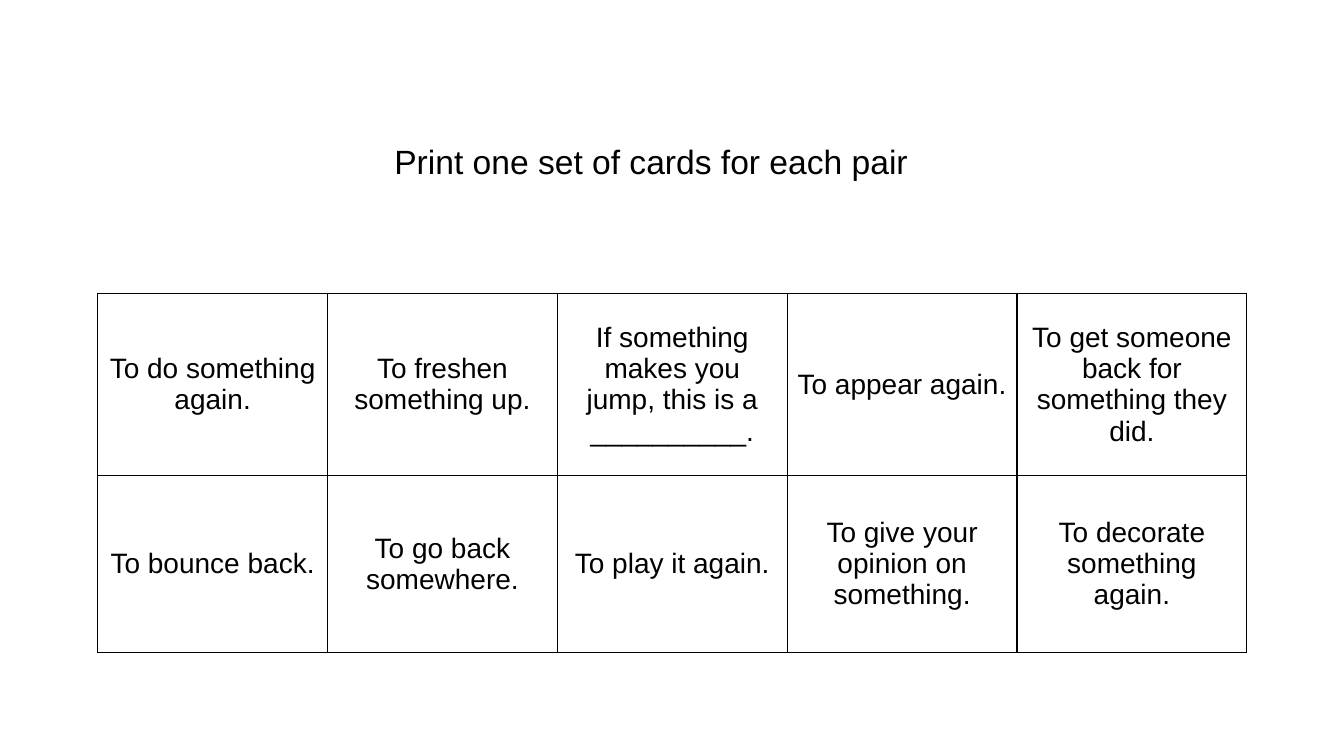
from pptx import Presentation
from pptx.dml.color import RGBColor
from pptx.enum import text
from pptx.oxml import ns, xmlchemy
from pptx.util import Pt

BLACK, WHITE = "000000", "FFFFFF"
COLUMN_WIDTH = 164.16
ROW_HEIGHTS = (130.32, 126)
CARDS = (
    ("To do something again.", "To freshen something up.",
     "If something makes you jump, this is a __________.",
     "To appear again.", "To get someone back for something they did."),
    ("To bounce back.", "To go back somewhere.", "To play it again.",
     "To give your opinion on something.", "To decorate something again."),
)


def colour(code):
    """Turn a hex string into a colour."""
    return RGBColor.from_string(code)


def write(para, words, size):
    """Write one centred black paragraph."""
    para.text = words
    para.alignment = text.PP_ALIGN.CENTER
    para.font.name = "Arial"
    para.font.size = Pt(size)
    para.font.color.rgb = colour(BLACK)


def add_title(page, words, left, top, width, height):
    """Add the heading above the cards."""
    frame = page.shapes.add_textbox(Pt(left), Pt(top), Pt(width), Pt(height)).text_frame
    frame.word_wrap = True
    frame.vertical_anchor = text.MSO_ANCHOR.MIDDLE
    write(frame.paragraphs[0], words, 24)
    frame.paragraphs[0].line_spacing = 0.9


def add_borders(cell):
    """Draw a thin line on all four sides of a cell."""
    properties = cell._tc.get_or_add_tcPr()
    for position, side in enumerate(("lnL", "lnR", "lnT", "lnB")):
        line = xmlchemy.OxmlElement(f"a:{side}")
        line.set("w", str(Pt(1)))
        fill = line.makeelement(ns.qn("a:solidFill"))
        fill.append(fill.makeelement(ns.qn("a:srgbClr"), {"val": BLACK}))
        line.append(fill)
        properties.insert(position, line)


def add_cards(page, left, top):
    """Add the grid of cards."""
    columns = len(CARDS[0])
    grid = page.shapes.add_table(len(CARDS), columns, Pt(left), Pt(top),
                                 Pt(columns * COLUMN_WIDTH), Pt(sum(ROW_HEIGHTS))).table
    grid.first_row = grid.horz_banding = False
    for column in grid.columns:
        column.width = Pt(COLUMN_WIDTH)
    for row, height, clues in zip(grid.rows, ROW_HEIGHTS, CARDS):
        row.height = Pt(height)
        for cell, clue in zip(row.cells, clues):
            cell.fill.solid()
            cell.fill.fore_color.rgb = colour(WHITE)
            cell.vertical_anchor = text.MSO_ANCHOR.MIDDLE
            write(cell.text_frame.paragraphs[0], clue, 20)
            add_borders(cell)


def main():
    """Build the card sheet."""
    deck = Presentation()
    deck.slide_width, deck.slide_height = Pt(960), Pt(540)
    page = deck.slides.add_slide(deck.slide_layouts[6])
    add_title(page, "Print one set of cards for each pair", 51.12, 64.8, 828, 104.4)
    add_cards(page, 69.84, 209.52)
    deck.save("out.pptx")


if __name__ == "__main__":
    main()
